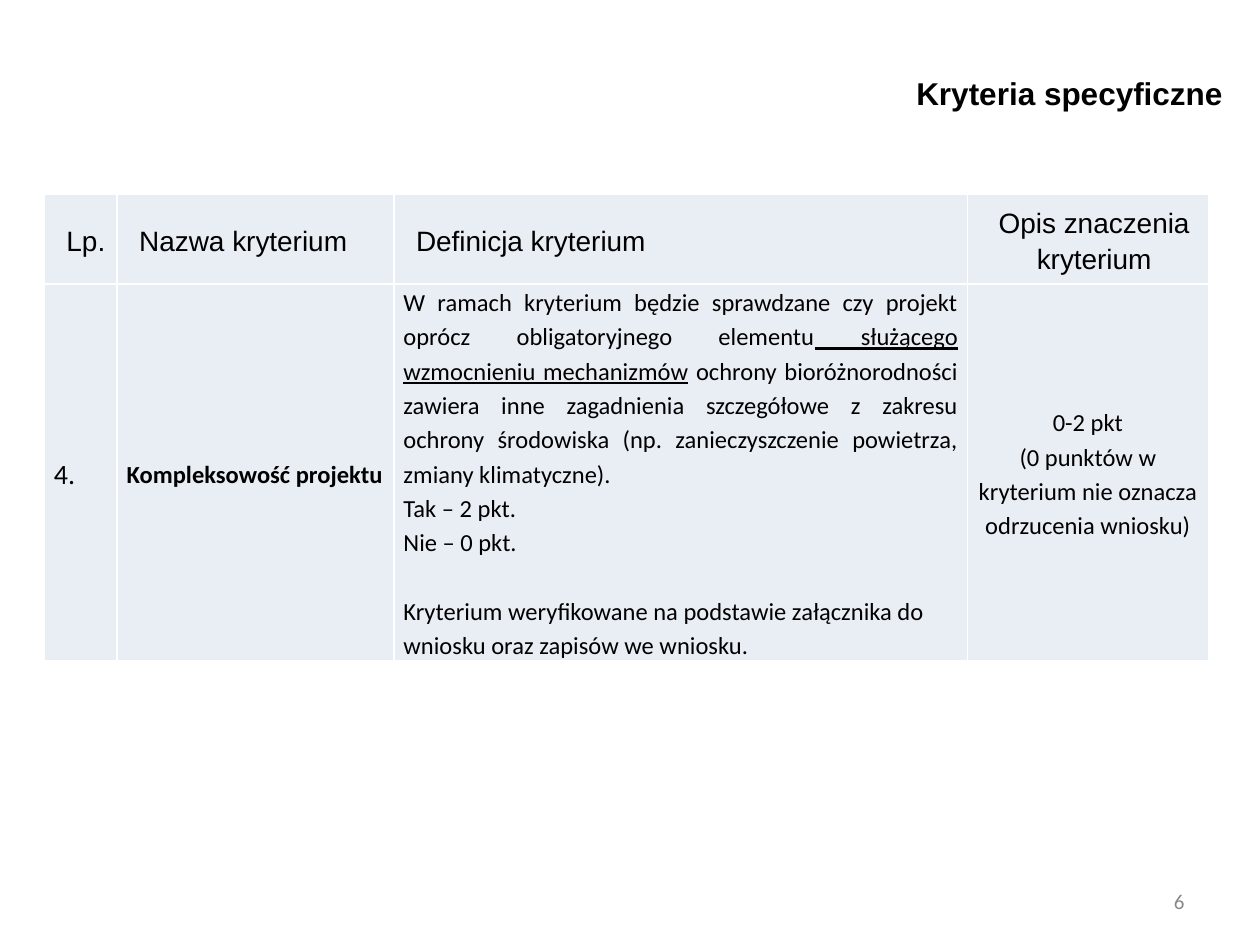
"""Build the slide with the specific criteria table."""
from lxml.etree import SubElement
from pptx import Presentation
from pptx.dml.color import RGBColor
from pptx.enum.text import MSO_ANCHOR, PP_ALIGN
from pptx.oxml.ns import qn
from pptx.util import Pt

COLORS = {"text": "000000", "number": "898989", "cell": "E9EDF4", "border": "FFFFFF"}
LEFT, CENTER, RIGHT, JUSTIFY = PP_ALIGN.LEFT, PP_ALIGN.CENTER, PP_ALIGN.RIGHT, PP_ALIGN.JUSTIFY


def set_values(target, values):
    for name, value in values.items():
        setattr(target, name, value)


def add_spans(para, spans, font, color):
    for text, extra in spans:
        span = para.add_run()
        span.text = text
        set_values(span.font, {**font, **extra})
        span.font.color.rgb = RGBColor.from_string(COLORS[color])


deck = Presentation()
set_values(deck, {"slide_width": Pt(720), "slide_height": Pt(540)})
page = deck.slides.add_slide(deck.slide_layouts[6])

heading_font = {"name": "Arial", "size": Pt(16)}
number_font = {"name": "Calibri", "size": Pt(16)}
body_font = {"name": "Calibri", "size": Pt(14)}
padding = {"margin_left": Pt(5.4), "margin_right": Pt(5.4), "margin_top": 0, "margin_bottom": 0}
spaced = {"space_after": Pt(10)}

headings = [
    ("Lp.", LEFT),
    ("Nazwa kryterium", LEFT),
    ("Definicja kryterium", LEFT),
    ("Opis znaczenia kryterium", CENTER),
]
definition = [
    ("W ramach kryterium będzie sprawdzane czy projekt oprócz obligatoryjnego elementu", {}),
    (" służącego wzmocnieniu mechanizmów", {"underline": True}),
    (" ochrony bioróżnorodności zawiera inne zagadnienia szczegółowe z zakresu ochrony "
     "środowiska (np. zanieczyszczenie powietrza, zmiany klimatyczne).", {}),
]
source_note = "Kryterium weryfikowane na podstawie załącznika do wniosku oraz zapisów we wniosku."
rows = [
    [(heading_font, Pt(7.2), [([(text, {})], align, spaced)]) for text, align in headings],
    [
        (number_font, 0, [([("4.", {})], LEFT, spaced)]),
        (body_font, 0, [([("Kompleksowość projektu", {"bold": True})], LEFT, {})]),
        (body_font, 0, [
            (definition, JUSTIFY, {}),
            ([("Tak – 2 pkt.", {})], JUSTIFY, {}),
            ([("Nie – 0 pkt.", {})], JUSTIFY, {}),
            ([(source_note, {})], LEFT, {"space_before": Pt(19.7)}),
        ]),
        (body_font, 0, [
            ([("0-2 pkt", {})], CENTER, {}),
            ([("(0 punktów w kryterium nie oznacza", {})], CENTER, {}),
            ([("odrzucenia wniosku)", {})], CENTER, {}),
        ]),
    ],
]

column_widths = [41.6, 158.2, 327.6, 137.8]
row_heights = [51, 215]
frame = page.shapes.add_table(
    len(row_heights), len(column_widths),
    Pt(25.4), Pt(111.2), Pt(sum(column_widths)), Pt(sum(row_heights)),
)
table = frame.table
for column, width in zip(table.columns, column_widths):
    column.width = Pt(width)
for row, height in zip(table.rows, row_heights):
    row.height = Pt(height)

for row, contents in zip(table.rows, rows):
    for cell, (font, indent, paragraphs) in zip(row.cells, contents):
        set_values(cell, {**padding, "vertical_anchor": MSO_ANCHOR.MIDDLE})
        properties = cell._tc.get_or_add_tcPr()
        for side in ("a:lnL", "a:lnR", "a:lnT", "a:lnB"):
            line = SubElement(properties, qn(side), w=str(Pt(1)))
            fill = SubElement(line, qn("a:solidFill"))
            SubElement(fill, qn("a:srgbClr"), val=COLORS["border"])
        cell.fill.solid()
        cell.fill.fore_color.rgb = RGBColor.from_string(COLORS["cell"])
        for index, (spans, align, spacing) in enumerate(paragraphs):
            para = cell.text_frame.add_paragraph() if index else cell.text_frame.paragraphs[0]
            set_values(para, {"alignment": align, "line_spacing": 1.15, **spacing})
            if indent:
                para._p.get_or_add_pPr().set("marL", str(indent))
            add_spans(para, spans, font, "text")

title_font = {"name": "Arial", "size": Pt(18), "bold": True}
page_number_font = {"name": "Calibri", "size": Pt(12)}
labels = [
    ("Kryteria specyficzne", (461.8, 38.9, 244, 36), title_font, "text",
     {"word_wrap": False, "vertical_anchor": MSO_ANCHOR.TOP}),
    ("6", (516.2, 500.4, 167.8, 28.8), page_number_font, "number",
     {"word_wrap": True, "vertical_anchor": MSO_ANCHOR.MIDDLE}),
]
for text, place, font, color, layout in labels:
    box = page.shapes.add_textbox(*map(Pt, place))
    set_values(box.text_frame, layout)
    para = box.text_frame.paragraphs[0]
    para.alignment = RIGHT
    add_spans(para, [(text, {})], font, color)

deck.save("out.pptx")
